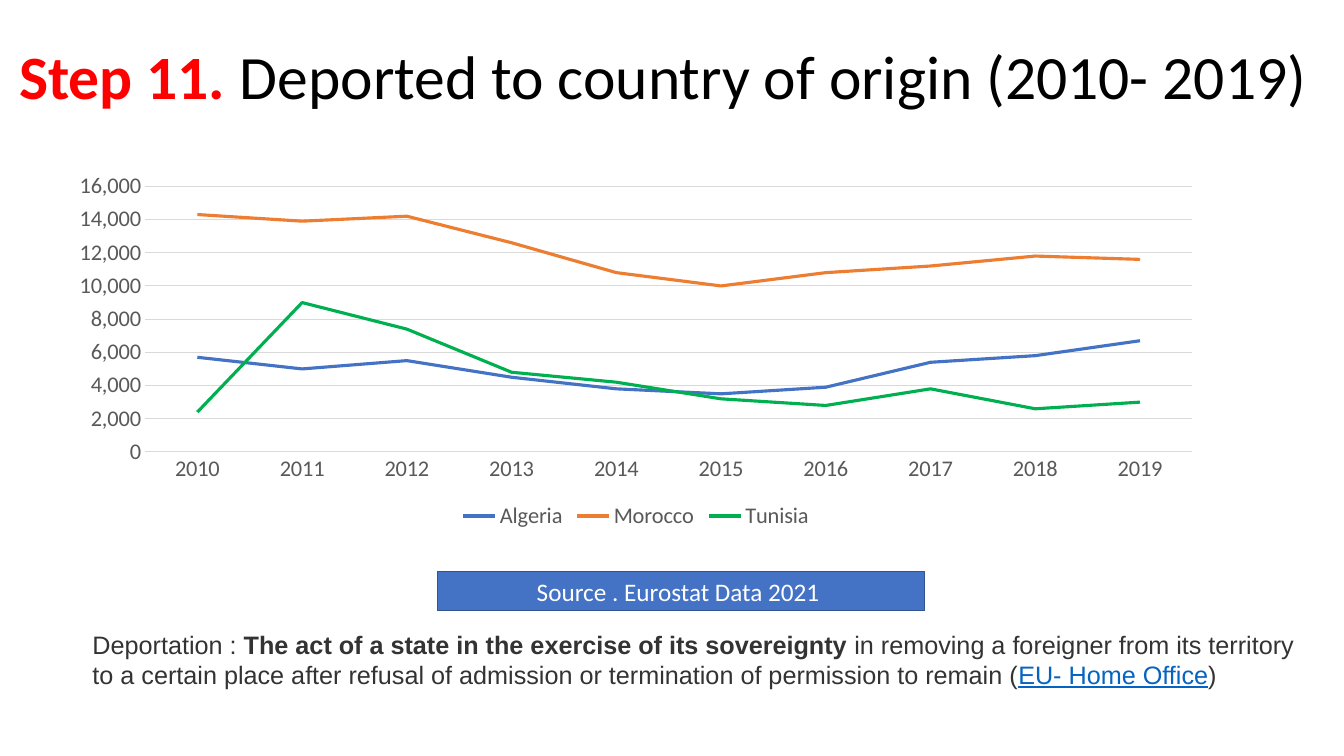
from pptx import Presentation
from pptx.chart.data import CategoryChartData
from pptx.dml.color import RGBColor
from pptx.enum.chart import XL_CHART_TYPE, XL_LEGEND_POSITION, XL_TICK_MARK
from pptx.enum.shapes import MSO_SHAPE
from pptx.enum.text import MSO_ANCHOR, PP_ALIGN
from pptx.util import Pt

GREY, RULE, BODY = "595959", "D9D9D9", "333333"


def color(value):
    return RGBColor.from_string(value)


class SlideBuilder:
    def __init__(self, slide, font="Calibri", chart_size=16):
        self.slide = slide
        self.font = font
        self.chart_size = chart_size

    def style_font(self, font, size, hex_color, name=None):
        font.name = name or self.font
        font.size = Pt(size)
        font.color.rgb = color(hex_color)

    def add_runs(self, frame, runs, size, name=None, anchor=MSO_ANCHOR.TOP,
                 align=PP_ALIGN.LEFT, spacing=1.0):
        """Each run is (text, color, bold, underline)."""
        frame.word_wrap = True
        frame.vertical_anchor = anchor
        paragraph = frame.paragraphs[0]
        paragraph.alignment = align
        paragraph.line_spacing = spacing
        for text, hex_color, bold, underline in runs:
            run = paragraph.add_run()
            run.text = text
            self.style_font(run.font, size, hex_color, name)
            run.font.bold = bold
            run.font.underline = underline

    def text(self, box, runs, size, **options):
        area = self.slide.shapes.add_textbox(*map(Pt, box))
        self.add_runs(area.text_frame, runs, size, **options)

    def label(self, box, runs, size, fill, line):
        banner = self.slide.shapes.add_shape(MSO_SHAPE.RECTANGLE, *map(Pt, box))
        banner.shadow.inherit = False
        banner.fill.solid()
        banner.fill.fore_color.rgb = color(fill)
        banner.line.color.rgb = color(line)
        banner.line.width = Pt(1)
        self.add_runs(banner.text_frame, runs, size,
                      anchor=MSO_ANCHOR.MIDDLE, align=PP_ALIGN.CENTER)

    def line_chart(self, box, categories, series):
        """Series maps each name to (color, values)."""
        data = CategoryChartData(number_format="#,##0")
        data.categories = categories
        for name, (_, values) in series.items():
            data.add_series(name, values)
        chart = self.slide.shapes.add_chart(
            XL_CHART_TYPE.LINE, *map(Pt, box), data).chart
        self.style_font(chart.font, self.chart_size, GREY)
        chart.has_title = False

        # Lines
        chart.plots[0].vary_by_categories = False
        for plotted, (hex_color, _) in zip(chart.plots[0].series, series.values()):
            plotted.smooth = False
            plotted.format.line.color.rgb = color(hex_color)
            plotted.format.line.width = Pt(2.25)

        # Axes and grid
        years, people = chart.category_axis, chart.value_axis
        for axis in (years, people):
            axis.major_tick_mark = axis.minor_tick_mark = XL_TICK_MARK.NONE
            self.style_font(axis.tick_labels.font, self.chart_size, GREY)
        people.minimum_scale, people.maximum_scale = 0, 16000
        people.major_unit = 2000
        people.tick_labels.number_format = "#,##0"
        people.tick_labels.number_format_is_linked = False
        people.format.line.fill.background()
        people.has_major_gridlines = True
        for rule in (years.format.line, people.major_gridlines.format.line):
            rule.color.rgb = color(RULE)
            rule.width = Pt(0.75)

        # Legend
        chart.has_legend = True
        chart.legend.position = XL_LEGEND_POSITION.BOTTOM
        chart.legend.include_in_layout = False
        self.style_font(chart.legend.font, self.chart_size, GREY)


def main():
    deck = Presentation()
    deck.slide_width, deck.slide_height = Pt(960), Pt(540)
    builder = SlideBuilder(deck.slides.add_slide(deck.slide_layouts[6]))

    # Title
    builder.text((6.5, 4.3, 946.8, 104.4), [
        ("Step 11. ", "FF0000", True, False),
        ("Deported to country of origin (2010- 2019)", "000000", False, False),
    ], 44, anchor=MSO_ANCHOR.MIDDLE, spacing=0.9)

    # Deportations by country
    deportations = {
        "Algeria": ("4472C4", (5700, 5000, 5500, 4500, 3800,
                               3500, 3900, 5400, 5800, 6700)),
        "Morocco": ("ED7D31", (14300, 13900, 14200, 12600, 10800,
                               10000, 10800, 11200, 11800, 11600)),
        "Tunisia": ("00B050", (2400, 9000, 7400, 4800, 4200,
                               3200, 2800, 3800, 2600, 3000)),
    }
    builder.line_chart((40.3, 118.1, 828, 263.5),
                       [str(year) for year in range(2010, 2020)], deportations)

    # Data source
    builder.label((312.5, 408.2, 347.8, 28.1),
                  [("Source . Eurostat Data 2021 ", "FFFFFF", False, False)],
                  18, "4472C4", "325491")

    # Definition
    builder.text((59, 445.7, 881.3, 51.1), [
        ("Deportation : ", BODY, False, False),
        ("The act of a state in the exercise of its sovereignty ", BODY, True, False),
        ("in removing a foreigner from its territory to a certain place after "
         "refusal of admission or termination of permission to remain (",
         BODY, False, False),
        ("EU- Home Office", "0563C1", False, True),
        (")", BODY, False, False),
    ], 18, name="Arial")

    deck.save("out.pptx")


if __name__ == "__main__":
    main()
